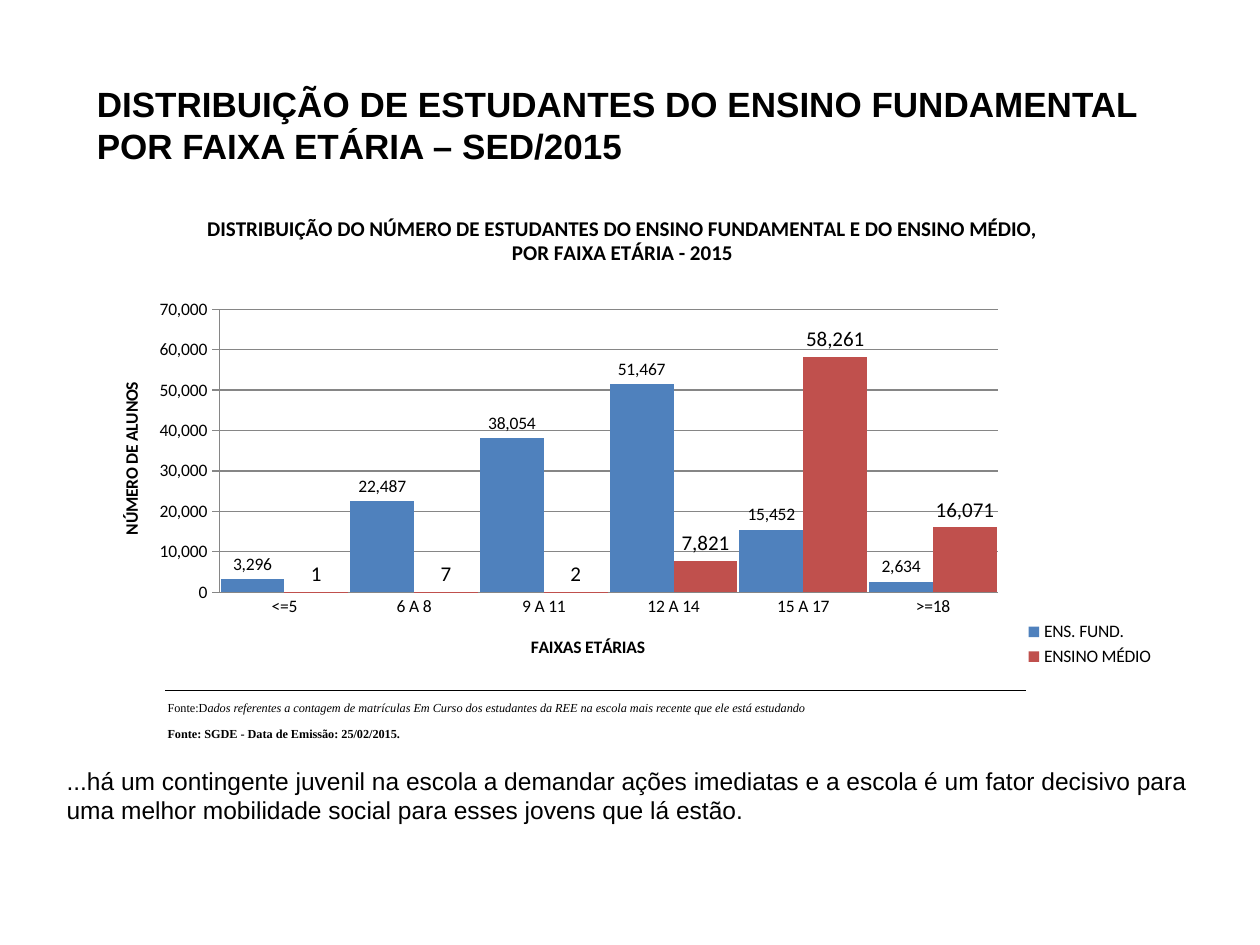
"""Builds a slide on the distribution of students by age group."""
from lxml import etree
from pptx import Presentation
from pptx import util as u
from pptx.chart.data import CategoryChartData
from pptx.dml.color import RGBColor
from pptx.enum import chart as ch
from pptx.enum import text
from pptx.oxml.ns import qn

BLACK = "000000"
GRID = "868686"
CATEGORIES = ["<=5", "6 A 8", "9 A 11", "12 A 14", "15 A 17", ">=18"]
SERIES = [
    ("ENS. FUND.", [3296, 22487, 38054, 51467, 15452, 2634], "4F81BD", 10),
    ("ENSINO MÉDIO", [1, 7, 2, 7821, 58261, 16071], "C0504D", 12),
]
CHART_TITLE = ("DISTRIBUIÇÃO DO NÚMERO DE ESTUDANTES DO ENSINO FUNDAMENTAL "
               "E DO ENSINO MÉDIO, POR FAIXA ETÁRIA - 2015")
SOURCES = [
    [("Fonte:D", False, False),
     ("ados referentes a contagem de matrículas Em Curso dos estudantes da REE "
      "na escola mais recente que ele está estudando", False, True)],
    [("Fonte: SGDE - Data de Emissão: 25/02/2015.", True, False)],
]


def color(value):
    """Return the colour for a hex string."""
    return RGBColor.from_string(value)


def style_font(font, name, size, bold=False, italic=False):
    """Set the face, size and weight of a black font."""
    font.name, font.size = name, u.Pt(size)
    font.bold, font.italic = bold, italic
    font.color.rgb = color(BLACK)


def add_text(slide, box, content, size, bold=False, anchor=text.MSO_ANCHOR.TOP):
    """Add a wrapped text box in Arial."""
    shape = slide.shapes.add_textbox(*map(u.Inches, box))
    frame = shape.text_frame
    frame.word_wrap = True
    frame.vertical_anchor = anchor
    frame.text = content
    style_font(frame.paragraphs[0].runs[0].font, "Arial", size, bold)


def place(element, index, **fractions):
    """Give a chart part a manual layout in fractions of the chart."""
    for old in element.findall(qn("c:layout")):
        element.remove(old)
    layout = etree.Element(qn("c:layout"))
    manual = etree.SubElement(layout, qn("c:manualLayout"))
    if "inner" in fractions:
        etree.SubElement(manual, qn("c:layoutTarget"), val=fractions.pop("inner"))
    for key in ("x", "y"):
        etree.SubElement(manual, qn(f"c:{key}Mode"), val="edge")
    for key, value in fractions.items():
        etree.SubElement(manual, qn(f"c:{key}"), val=str(value))
    element.insert(index, layout)


def set_title(title, content, size, x, y):
    """Write a bold chart or axis title and place it."""
    title.text_frame.text = content
    style_font(title.text_frame.paragraphs[0].runs[0].font, "Calibri", size, True)
    place(title._element, 1, x=x, y=y)


def style_series(series, fill, label_size):
    """Colour a series and show its values above the bars."""
    series.format.fill.solid()
    series.format.fill.fore_color.rgb = color(fill)
    labels = series.data_labels
    labels.show_value = True
    labels.number_format, labels.number_format_is_linked = "#,##0", False
    labels.position = ch.XL_LABEL_POSITION.OUTSIDE_END
    style_font(labels.font, "Calibri", label_size)


def style_axes(chart):
    """Set the titles, ticks and lines of both axes."""
    category, value = chart.category_axis, chart.value_axis
    set_title(category.axis_title, "FAIXAS ETÁRIAS", 10, 0.41, 0.9)
    set_title(value.axis_title, "NÚMERO DE ALUNOS", 10, 0.03, 0.39)
    category.major_tick_mark = ch.XL_TICK_MARK.NONE
    value.major_tick_mark = ch.XL_TICK_MARK.OUTSIDE
    value.minimum_scale, value.maximum_scale, value.major_unit = 0, 70000, 10000
    value.tick_labels.number_format = "#,##0"
    value.tick_labels.number_format_is_linked = False
    for part in (category, value, value.major_gridlines):
        part.format.line.color.rgb = color(GRID)
        part.format.line.width = u.Pt(0.75)


def add_student_chart(slide, box):
    """Add the clustered columns of students by age group."""
    data = CategoryChartData(number_format="#,##0")
    data.categories = CATEGORIES
    for name, values, _, _ in SERIES:
        data.add_series(name, values)
    chart = slide.shapes.add_chart(
        ch.XL_CHART_TYPE.COLUMN_CLUSTERED, *map(u.Inches, box), data).chart
    style_font(chart.font, "Calibri", 10)
    set_title(chart.chart_title, CHART_TITLE, 12, 0.11, 0.05)
    plot = chart.plots[0]
    plot.gap_width, plot.overlap, plot.vary_by_categories = 3, 0, False
    for series, (_, _, fill, label_size) in zip(plot.series, SERIES):
        style_series(series, fill, label_size)
    style_axes(chart)
    chart.has_legend = True
    chart.legend.position = ch.XL_LEGEND_POSITION.RIGHT
    chart.legend.include_in_layout = False
    place(chart.legend._element, 1, x=0.86, y=0.87, w=0.14, h=0.11)
    plot_area = chart._chartSpace.chart.plotArea
    place(plot_area, 0, inner="inner", x=0.125, y=0.25, w=0.72, h=0.57)


def set_top_border(cell, value, points):
    """Draw a line along the top of a table cell."""
    line = etree.Element(qn("a:lnT"), w=str(u.Pt(points)))
    fill = etree.SubElement(line, qn("a:solidFill"))
    etree.SubElement(fill, qn("a:srgbClr"), val=value)
    cell._tc.get_or_add_tcPr().insert(0, line)


def add_source_table(slide, box):
    """Add the source notes under a rule."""
    table = slide.shapes.add_table(len(SOURCES), 1, *map(u.Inches, box)).table
    table.first_row = table.horz_banding = False
    for row, runs in enumerate(SOURCES):
        cell = table.cell(row, 0)
        cell.fill.background()
        cell.vertical_anchor = text.MSO_ANCHOR.BOTTOM
        cell.margin_left = cell.margin_right = u.Inches(0.03)
        cell.margin_top = cell.margin_bottom = 0
        paragraph = cell.text_frame.paragraphs[0]
        paragraph.line_spacing = 1.15
        for content, bold, italic in runs:
            run = paragraph.add_run()
            run.text = content
            style_font(run.font, "Times New Roman", 7, bold, italic)
    set_top_border(table.cell(0, 0), BLACK, 1)


def main():
    """Build and save the slide."""
    presentation = Presentation()
    presentation.slide_width = u.Inches(10)
    presentation.slide_height = u.Inches(7.5)
    slide = presentation.slides.add_slide(presentation.slide_layouts[6])
    add_text(slide, (0.67, 0.6, 8.66, 0.77),
             "DISTRIBUIÇÃO DE ESTUDANTES DO ENSINO FUNDAMENTAL "
             "POR FAIXA ETÁRIA – SED/2015", 20, True, text.MSO_ANCHOR.MIDDLE)
    add_student_chart(slide, (0.67, 1.47, 8.58, 3.94))
    add_source_table(slide, (1.3, 5.48, 6.85, 0.4))
    add_text(slide, (0.43, 6.03, 9.45, 0.57),
             "...há um contingente juvenil na escola a demandar ações imediatas "
             "e a escola é um fator decisivo para uma melhor mobilidade social "
             "para esses jovens que lá estão.", 14)
    presentation.save("out.pptx")


if __name__ == "__main__":
    main()
